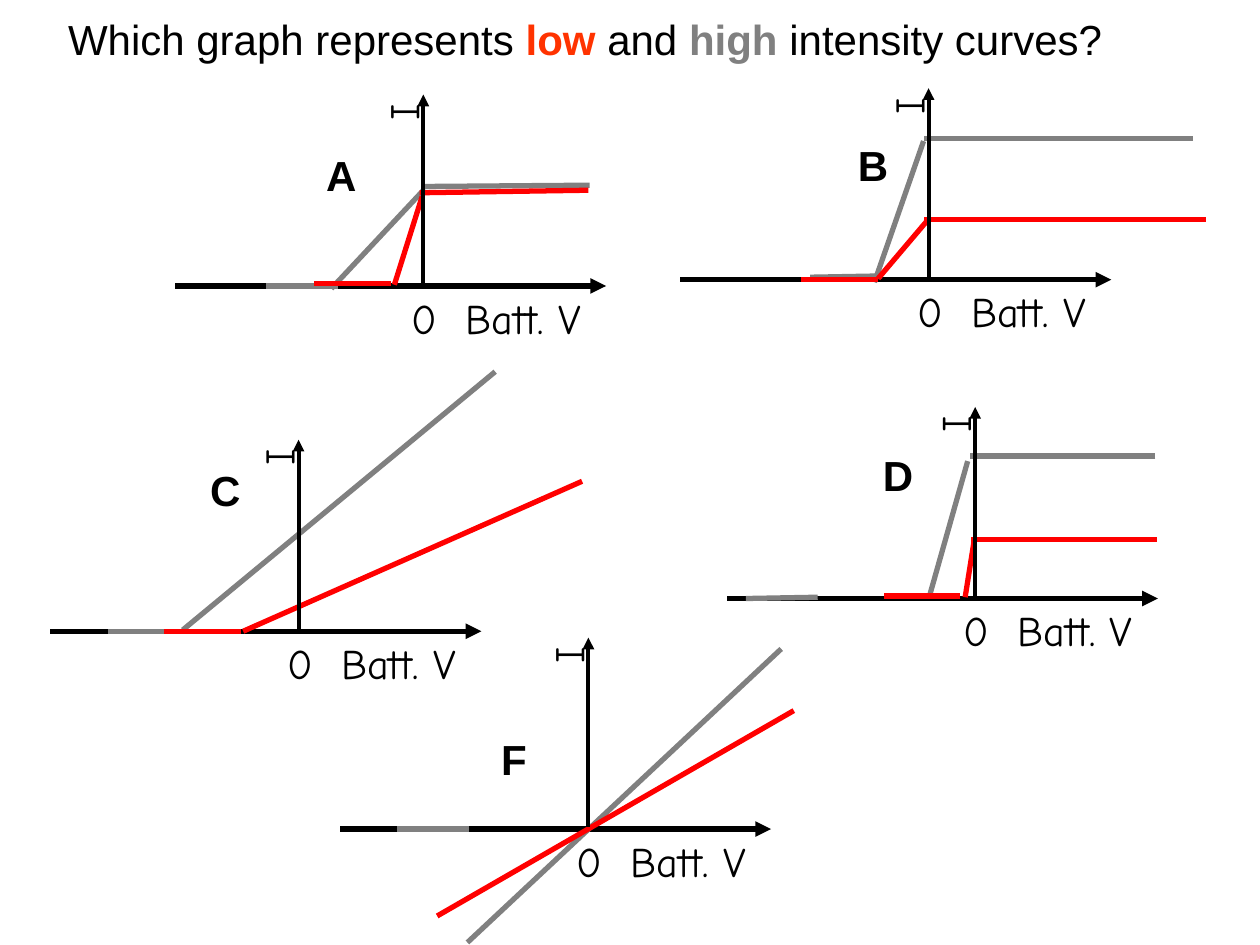
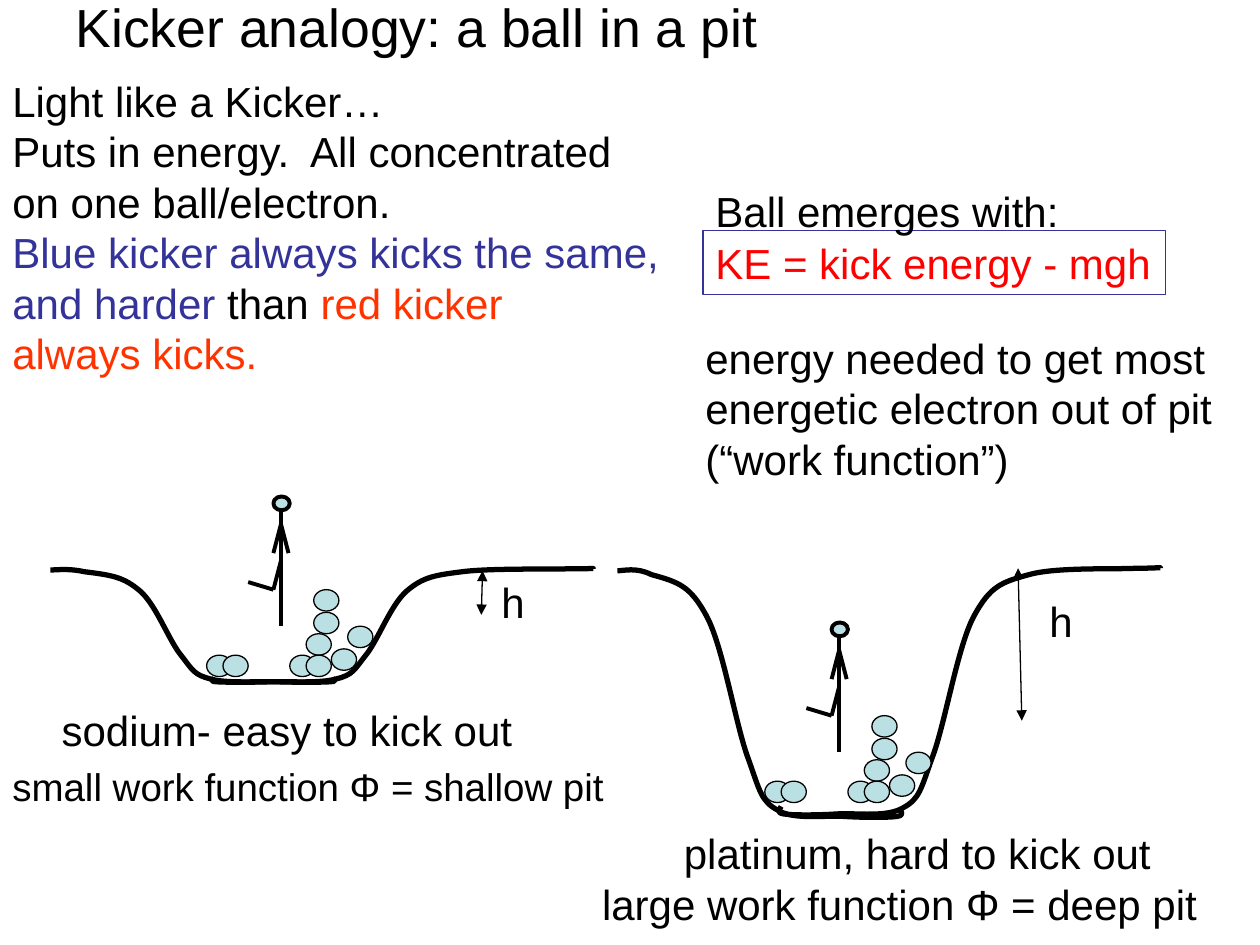
from lxml.etree import SubElement
from pptx import Presentation
from pptx.dml.color import RGBColor
from pptx.enum.shapes import MSO_CONNECTOR as Wire, MSO_SHAPE as Form
from pptx.enum.text import MSO_ANCHOR as Anchor, MSO_AUTO_SIZE as Fit, PP_ALIGN as Align
from pptx.oxml.ns import qn
from pptx.util import Pt

SCALE = 9144
BLACK, GREY, RED = "000000", "808080", "FF0000"
ORANGE, BLUE, PALE = "FF3300", "333399", "BBE0E3"
SANS, HAND = "Arial", "Comic Neue"

GRAPHS = [
    ("A", (139, 227), (110, -113), {
        GREY: [(329, -80, 197, -79), (198, -77, 124, 2), (72, 0, 129, 0)],
        RED: [(328, -76, 194, -74), (196, -71, 174, -1), (171, -2, 110, -2)]}),
    ("B", (540, 222), (131, -116), {
        GREY: [(407, -112, 193, -112), (193, -110, 154, 2), (103, -2, 160, -3)],
        RED: [(417, -48, 193, -48), (196, -47, 157, -1), (157, 0, 96, 0)]}),
    ("D", (577, 475), (114, -123), {
        GREY: [(340, -113, 193, -113), (191, -109, 161, -3), (15, 0, 72, -1)],
        RED: [(341, -47, 194, -47), (196, -45, 189, -1), (185, -2, 125, -2)]}),
    ("C", (40, 501), (117, -137), {
        GREY: [(353, -206, 105, -1), (46, 0, 103, 0)],
        RED: [(422, -119, 153, 0), (151, 0, 90, 0)]}),
    ("F", (270, 658), (118, -81), {
        GREY: [(350, -143, 101, 90), (45, 0, 102, 0)],
        RED: [(360, -94, 77, 69)]}),
]

WALL = [(-47, 190), (-47, 191), (-52, 195), (-45, 196), (-38, 197), (-18, 197),
        (-3, 196), (13, 195), (37, 199), (50, 191), (63, 184), (64, 176), (73, 151),
        (83, 125), (93, 63), (106, 39), (119, 15), (128, 12), (150, 6)]
RIGHT = [(171, 0), (218, 2), (235, 1), (253, 1), (255, 0), (254, 1)]
LEFT = [(162, 0), (172, 3), (177, 3)]
LIMBS = [(0, 0, 0, 51), (0, 22, -6, 45), (0, 22, 6, 45),
         (0, 51, 0, 103), (0, 51, -6, 74), (-26, 68, -6, 74)]
BALLS = [(7, 126), (20, 109), (-59, 126), (-46, 126), (26, 74),
         (26, 92), (53, 103), (20, 126), (40, 121)]


def px(*sizes):
    """Turn px lengths into EMU."""
    return [round(size * SCALE) for size in sizes]


def tint(code):
    """Make a colour from a hex string."""
    return RGBColor.from_string(code)


def ink(shape, code, width):
    """Set the outline of a shape."""
    shape.line.color.rgb = tint(code)
    shape.line.width = Pt(width)


def fill(frame, paras, size=24, face=SANS, bold=None):
    """Write paragraphs, each a list of (text, colour) or (text, colour, bold) runs."""
    for index, parts in enumerate(paras):
        para = frame.add_paragraph() if index else frame.paragraphs[0]
        para.alignment = Align.LEFT
        for text, code, *heavy in parts:
            run = para.add_run()
            run.text = text
            run.font.color.rgb = tint(code)
            run.font.bold = heavy[0] if heavy else bold
        for font in (para.font, *(run.font for run in para.runs)):
            font.size, font.name = Pt(size), face


def label(shapes, box, paras, **look):
    """Add a text box that does not wrap."""
    item = shapes.add_textbox(*px(*box))
    item.text_frame.word_wrap = False
    item.text_frame.auto_size = Fit.SHAPE_TO_FIT_TEXT
    fill(item.text_frame, paras, **look)
    return item


def plain(*rows):
    """Make one black run for each row."""
    return [[(row, BLACK)] for row in rows]


def line(shapes, spot, ends, code=BLACK, width=3, tips=()):
    """Draw a straight line from a spot, with arrowheads at the named tips."""
    x, y = spot
    x1, y1, x2, y2 = ends
    wire = shapes.add_connector(Wire.STRAIGHT, *px(x + x1, y + y1, x + x2, y + y2))
    ink(wire, code, width)
    props = wire._element.spPr
    for tip in tips:
        SubElement(props.find(qn("a:ln")), qn("a:" + tip), type="triangle")
    SubElement(props, qn("a:effectLst"))


def disc(shapes, box, width):
    """Draw a pale outlined ellipse."""
    item = shapes.add_shape(Form.OVAL, *px(*box))
    item.shadow.inherit = False
    item.fill.solid()
    item.fill.fore_color.rgb = tint(PALE)
    ink(item, BLACK, width)


def bend(curve):
    """Turn each three straight segments of an outline into one cubic curve."""
    trace = curve._element.find(".//" + qn("a:path"))
    legs = trace.findall(qn("a:lnTo"))
    for start in range(0, len(legs), 3):
        cubic = SubElement(trace, qn("a:cubicBezTo"))
        for leg in legs[start:start + 3]:
            cubic.append(leg[0])
            trace.remove(leg)


def head(page, box, parts, size, anchor):
    """Place and write the title."""
    title = page.shapes.title
    title.left, title.top, title.width, title.height = px(*box)
    frame = title.text_frame
    frame.word_wrap, frame.auto_size = True, Fit.NONE
    frame.vertical_anchor = anchor
    fill(frame, [parts], size=size)


def graph(shapes, name, spot, tag, curves):
    """Draw one current graph from the left end of its voltage axis."""
    x, y = spot
    line(shapes, spot, (342, 0, 0, 0), tips=["headEnd"])
    volts = label(shapes, (x + 178, y, 170, 57), plain("0\tBatt. V"), face=HAND)
    volts.text_frame.word_wrap = True
    props = volts.text_frame.paragraphs[0]._p.get_or_add_pPr()
    stops = props.makeelement(qn("a:tabLst"))
    SubElement(stops, qn("a:tab"), pos=str(px(43)[0]), algn="l")
    props.insert(0, stops)
    amps = label(shapes, (x + 155, y - 157, 58, 57), plain("I"), face=HAND)
    amps.rotation = 270
    amps.text_frame.margin_left = px(32)[0]
    for code, lines in curves.items():
        for ends in lines:
            line(shapes, spot, ends, code)
    line(shapes, spot, (197, -2, 197, -152), width=2.25, tips=["tailEnd"])
    label(shapes, (x + tag[0], y + tag[1], 44, 50), plain(name), bold=True)


def wall(shapes, spot, knots, side, depth):
    """Draw one wall of a pit, outwards from its middle."""
    x, y = spot
    first, *rest = [px(x + side * a, y + depth * b) for a, b in knots]
    pen = shapes.build_freeform(*first, scale=1.0)
    pen.add_line_segments(rest, close=False)
    curve = pen.convert_to_shape()
    bend(curve)
    curve.shadow.inherit = False
    curve.fill.background()
    ink(curve, BLACK, 3)


def cast(shapes, spot):
    """Draw the kicker and the balls below the top of the head."""
    x, y = spot
    for limb in LIMBS:
        line(shapes, spot, limb, width=2.25)
    disc(shapes, (x - 6, y, 13, 11), 2.25)
    for a, b in BALLS:
        disc(shapes, (x + a, y + b, 20, 17), 0.75)


def pit(page, spot, depths, man, rise, mark):
    """Draw a pit with its kicker, balls and height, and return its shapes."""
    shapes = page.shapes.add_group_shape().shapes
    for tail, side, depth in zip((RIGHT, LEFT), (1, -1), depths):
        wall(shapes, spot, WALL + tail, side, depth)
    cast(shapes, man)
    line(shapes, (0, 0), rise, width=0.75, tips=["headEnd", "tailEnd"])
    label(shapes, (*mark, 39, 50), plain("h"))
    return shapes


def quiz(page):
    """Build the slide of graphs."""
    head(page, (44, 6, 850, 50), [
        ("Which graph represents ", BLACK), ("low", ORANGE, True), (" and ", BLACK),
        ("high", GREY, True), (" intensity curves?", BLACK)], 24, Anchor.TOP)
    for item in GRAPHS:
        graph(page.shapes, *item)


def kicks(page):
    """Build the slide of the two pits."""
    shapes = page.shapes
    head(page, (50, 0, 900, 42), [("Kicker analogy: a ball in a pit", BLACK)],
         30.6, Anchor.MIDDLE)
    label(shapes, (0, 55, 533, 250), plain(
        "Light like a Kicker…", "Puts in energy.  All concentrated",
        "on one ball/electron.") + [
        [("Blue kicker always kicks the same,", BLUE)],
        [("and harder ", BLUE), ("than ", BLACK), ("red kicker", ORANGE)],
        [("always kicks.", ORANGE)]])
    frame = shapes.add_shape(Form.RECTANGLE, *px(558, 183, 367, 51))
    frame.shadow.inherit = False
    frame.fill.background()
    ink(frame, BLUE, 0.75)
    frame.text_frame.word_wrap = False
    fill(frame.text_frame, [[("KE = kick energy - mgh", RED)]])
    label(shapes, (558, 142, 293, 50), plain("Ball emerges with:"))

    deep = pit(page, (667, 450), (1, 1.01), (666, 494), (811, 572, 808, 451), (823, 468))
    note = label(deep, (468, 652, 497, 91), plain(
        "platinum, hard to kick out", "large work function Φ = deep pit"))
    note.text_frame.paragraphs[0]._p.get_or_add_pPr().set("marL", str(px(65)[0]))
    low = pit(page, (217, 451), (0.46, 0.46), (223, 394), (382, 488, 383, 453), (388, 453))
    easy = label(low, (39, 554, 415, 50), plain("sodium- easy to kick out"))
    easy.text_frame.word_wrap = True
    label(low, (0, 601, 495, 47), plain("small work function Φ = shallow pit"), size=22)
    label(shapes, (550, 259, 422, 130), plain(
        "energy needed to get most", "energetic electron out of pit", "(“work function”)"))


def main():
    """Build and save both slides."""
    deck = Presentation()
    deck.slide_width, deck.slide_height = px(1000, 750)
    for build in (quiz, kicks):
        build(deck.slides.add_slide(deck.slide_layouts[5]))
    deck.save("out.pptx")


if __name__ == "__main__":
    main()
